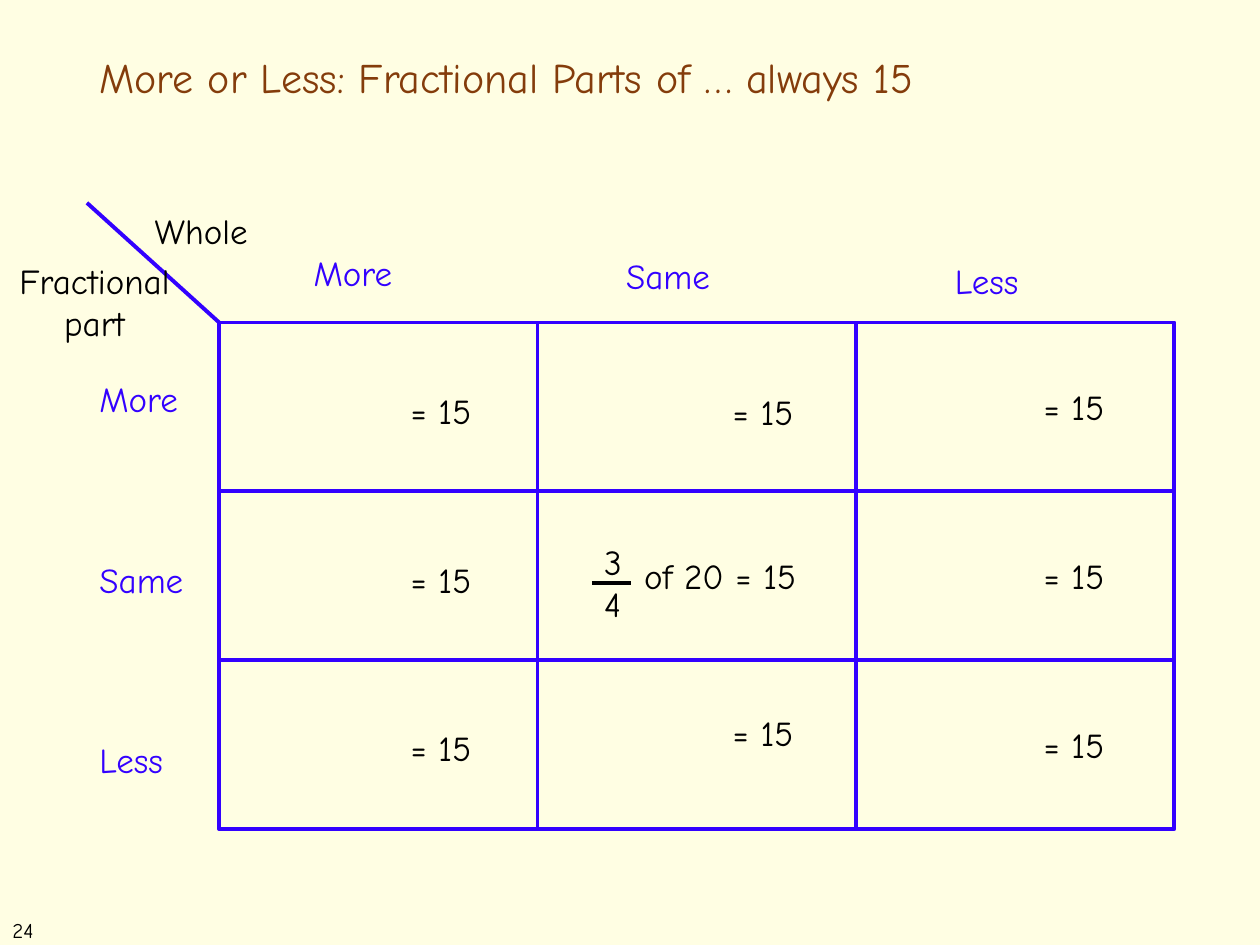
from collections import namedtuple

from lxml.etree import SubElement
from pptx import Presentation
from pptx.dml.color import RGBColor
from pptx.enum.shapes import MSO_CONNECTOR, MSO_SHAPE
from pptx.enum.text import MSO_ANCHOR, MSO_AUTO_SIZE, PP_ALIGN
from pptx.oxml.ns import qn
from pptx.util import Inches, Pt

Box = namedtuple("Box", "left top width height")

FONT = "Comic Neue"
CREAM, BROWN, VIOLET, BLACK = "FFFEE3", "843C0B", "3301FF", "000000"
LINE_WIDTH = 2.25
TEXT_HEIGHT = 0.44
LEVELS = ["More", "Same", "Less"]
GRID = Box(1.74, 2.56, 7.58, 4.02)
COLUMN, ROW = GRID.width / 3, GRID.height / 3


def color(value):
    return RGBColor.from_string(value)


def inches(box):
    return [Inches(length) for length in box]


def format_text(frame, size, ink, align):
    for para in frame.paragraphs:
        para.alignment = align
        for span in para.runs:
            span.font.name = FONT
            span.font.size = Pt(size)
            span.font.color.rgb = color(ink)


def add_text(shapes, box, text, ink=BLACK, size=20, align=PP_ALIGN.LEFT, wrap=True):
    frame = shapes.add_textbox(*inches(box)).text_frame
    frame.word_wrap = wrap
    frame.auto_size = MSO_AUTO_SIZE.SHAPE_TO_FIT_TEXT
    frame.text = text
    format_text(frame, size, ink, align)


def add_line(shapes, start, end, ink):
    line = shapes.add_connector(MSO_CONNECTOR.STRAIGHT, *inches(start + end))
    line.line.color.rgb = color(ink)
    line.line.width = Pt(LINE_WIDTH)
    SubElement(line._element.spPr, qn("a:effectLst"))


def add_title(page, box, text):
    title = page.shapes.title
    title.left, title.top, title.width, title.height = inches(box)
    frame = title.text_frame
    frame.text = text
    frame.vertical_anchor = MSO_ANCHOR.MIDDLE
    frame.auto_size = MSO_AUTO_SIZE.NONE
    frame.paragraphs[0].line_spacing = 0.9
    format_text(frame, 24, BROWN, PP_ALIGN.LEFT)


def add_grid(page, box):
    for row in range(3):
        for column in range(3):
            place = Box(box.left + column * COLUMN, box.top + row * ROW, COLUMN, ROW)
            cell = page.shapes.add_shape(MSO_SHAPE.RECTANGLE, *inches(place))
            cell.shadow.inherit = False
            cell.fill.background()
            cell.line.color.rgb = color(VIOLET)
            cell.line.width = Pt(LINE_WIDTH)


def add_headings(page, box):
    column_places = [(2.39, 1.95), (4.87, 1.97), (7.48, 2.01)]
    for index, (level, place) in enumerate(zip(LEVELS, column_places)):
        width = 1.05 if level == "Less" else 0.89
        row_place = (box.left - 1.05, box.top + 0.39 + index * 1.43)
        for left, top in (row_place, place):
            add_text(page.shapes, Box(left, top, width, TEXT_HEIGHT), level, VIOLET)


def add_corner(page, box):
    right, bottom = box.left + box.width, box.top + box.height
    add_line(page.shapes, (right, bottom), (box.left, box.top), VIOLET)
    add_text(page.shapes, Box(box.left + 0.44, box.top, 1.5, TEXT_HEIGHT), "Whole")
    add_text(page.shapes, Box(0, box.top + 0.4, 1.5, 0.77), "Fractional part",
             align=PP_ALIGN.CENTER)


def add_fraction(page, box, top_number, bottom_number):
    group = page.shapes.add_group_shape()
    add_text(group.shapes, box, f"{top_number}\n{bottom_number}", wrap=False)
    middle = box.top + box.height / 2
    add_line(group.shapes, (box.left, middle), (box.left + 0.31, middle), BLACK)


def add_answers(page, box):
    column_offsets = [(1.42, 0.48), (1.45, 0.49), (1.39, 0.45)]
    for row in range(3):
        for column, (across, down) in enumerate(column_offsets):
            left = box.left + column * COLUMN
            top = box.top + row * ROW
            if (row, column) == (1, 1):
                add_text(page.shapes, Box(left + 0.61, top + 0.45, 1.68, TEXT_HEIGHT),
                         "of 20 = 15", align=PP_ALIGN.CENTER)
                add_fraction(page, Box(left + 0.43, top + 0.34, 0.36, 0.77), 3, 4)
                continue
            if (row, column) == (2, 1):
                down = 0.36
            add_text(page.shapes, Box(left + across, top + down, 0.71, TEXT_HEIGHT),
                     "= 15", wrap=False)


def main():
    deck = Presentation()
    deck.slide_width, deck.slide_height = Inches(10), Inches(7.5)
    page = deck.slides.add_slide(deck.slide_layouts[5])
    page.background.fill.solid()
    page.background.fill.fore_color.rgb = color(CREAM)
    add_title(page, Box(0.69, 0.4, 8.62, 0.47),
              "More or Less: Fractional Parts of … always 15")
    add_grid(page, GRID)
    add_headings(page, GRID)
    add_corner(page, Box(0.69, 1.61, 1.05, 0.95))
    add_answers(page, GRID)
    add_text(page.shapes, Box(0, 7.23, 0.49, 0.3), "24", size=12)
    deck.save("out.pptx")


if __name__ == "__main__":
    main()
